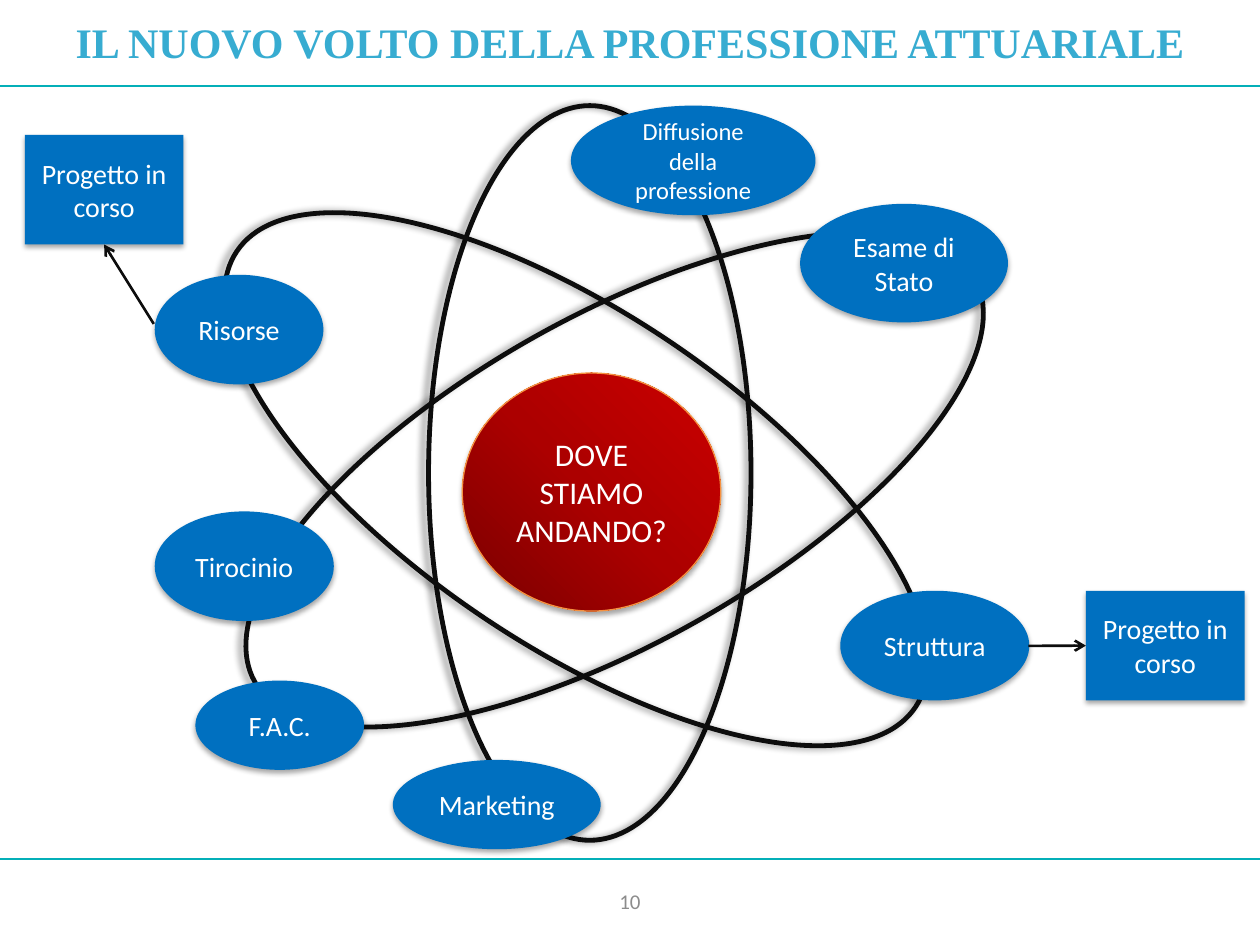
from copy import deepcopy

from lxml.etree import SubElement
from pptx import Presentation
from pptx.dml.color import RGBColor
from pptx.enum.shapes import MSO_CONNECTOR as CONN, MSO_SHAPE as SHAPE
from pptx.enum.text import MSO_ANCHOR as ANCHOR, MSO_AUTO_SIZE as AUTO, PP_ALIGN as ALIGN
from pptx.oxml.ns import qn
from pptx.util import Cm, Pt

BLUE, TEAL, INK, WHITE = "0070C0", "04AFB8", "0D0D0D", "FFFFFF"
WIDTH, HEIGHT = 25.4, 19.05
NODE_SHADOW = {"alpha": 35, "blur": 3.1, "dist": 1.8, "angle": 90}
ORBIT_SHADOW = {"alpha": 40, "blur": 4, "dist": 3, "angle": 180}

ORBITS = [  # left, top, width, height, rotation
    (8.64, 2.13, 6.5, 14.81, 0),
    (8.26, 1.42, 6.71, 16.48, 303.9),
    (9.09, 1.35, 6.6, 16.64, 60.7),
]
TOPICS = [  # text, box, size
    ("Diffusione della professione", (11.51, 2.13, 4.93, 2.21), 14),
    ("Marketing", (7.92, 15.32, 4.19, 1.8), 16),
    ("Risorse", (3.12, 5.54, 3.4, 2.21), 16),
    ("Struttura", (16.94, 11.91, 3.81, 2.21), 16),
    ("Esame di Stato", (16.13, 4.11, 4.19, 2.39), 16),
    ("F.A.C.", (3.94, 13.72, 3.4, 1.8), 16),
    ("Tirocinio", (3.12, 10.31, 3.61, 2.21), 16),
]
PROJECTS = [  # left, top, arrow start, side of the box it reaches
    (21.89, 11.91, (20.73, 13.02), 1),
    (0.5, 2.72, (3.1, 6.53), 2),
]


def rgb(value):
    return RGBColor.from_string(value)


class Deck:
    """Holds the style and the current slide."""

    text_format = {"name": "Calibri", "size": Pt(16), "bold": False}

    def __init__(self):
        self.prs = Presentation()
        self.prs.slide_width, self.prs.slide_height = Cm(WIDTH), Cm(HEIGHT)
        self.s = self.prs.slides.add_slide(self.prs.slide_layouts[5])

    def label(self, sp, text, color=WHITE, **changes):
        tf = sp.text_frame
        tf.word_wrap, tf.auto_size = True, AUTO.NONE
        tf.vertical_anchor = ANCHOR.MIDDLE
        p = tf.paragraphs[0]
        p.alignment = ALIGN.CENTER
        r = p.add_run()
        r.text = text
        for name, value in {**self.text_format, **changes}.items():
            setattr(r.font, name, value)
        r.font.color.rgb = rgb(color)

    def title(self, text, box, color, **changes):
        sp = self.s.shapes.title
        for name, value in zip(("left", "top", "width", "height"), box):
            setattr(sp, name, Cm(value))
        self.label(sp, text, color, **changes)

    def text(self, text, box, color, **changes):
        self.label(self.s.shapes.add_textbox(*map(Cm, box)), text, color, **changes)

    def shape(self, kind, box, shadow, fill=None, line=None, weight=1):
        sp = self.s.shapes.add_shape(kind, *map(Cm, box))
        if fill:
            sp.fill.solid()
            sp.fill.fore_color.rgb = rgb(fill)
        else:
            sp.fill.background()
        if line:
            sp.line.color.rgb = rgb(line)
            sp.line.width = Pt(weight)
        else:
            sp.line.fill.background()
        self.shadow(sp, **shadow)
        return sp

    def shadow(self, sp, alpha, blur, dist, angle):
        sp.shadow.inherit = False
        effects = sp._element.spPr.find(qn("a:effectLst"))
        outer = SubElement(effects, qn("a:outerShdw"), blurRad=str(Pt(blur)),
                           dist=str(Pt(dist)), dir=str(angle * 60000), rotWithShape="0")
        black = SubElement(outer, qn("a:srgbClr"), val="000000")
        SubElement(black, qn("a:alpha"), val=str(alpha * 1000))

    def gradient(self, sp, stops, angle):
        """Fill with (percent, colour) stops; angle runs counter-clockwise."""
        sp.fill.gradient()
        sp.fill.gradient_angle = angle
        gs_list = sp._element.spPr.find(qn("a:gradFill")).find(qn("a:gsLst"))
        while len(gs_list) < len(stops):
            gs_list.append(deepcopy(gs_list[0]))
        for stop, (percent, color) in zip(sp.fill.gradient_stops, stops):
            stop.position = percent / 100
            stop.color.rgb = rgb(color)

    def line(self, start, end, color, weight):
        cn = self.s.shapes.add_connector(CONN.STRAIGHT, *map(Cm, (*start, *end)))
        cn.line.color.rgb = rgb(color)
        cn.line.width = Pt(weight)
        SubElement(cn._element.spPr, qn("a:effectLst"))
        return cn

    def arrow(self, start, target, side):
        cn = self.line(start, start, INK, 1.5)
        cn.end_connect(target, side)
        SubElement(cn._element.spPr.find(qn("a:ln")), qn("a:tailEnd"), type="arrow")


def main():
    deck = Deck()
    deck.title("IL NUOVO VOLTO DELLA PROFESSIONE ATTUARIALE", (0, 0.15, WIDTH, 1.37),
               "37ACD1", name="Times New Roman", size=Pt(24), bold=True)
    for y, weight in ((17.32, 1), (1.73, 1.5)):
        deck.line((0, y), (WIDTH, y), TEAL, weight)

    for *box, rotation in ORBITS:
        orbit = deck.shape(SHAPE.OVAL, box, ORBIT_SHADOW, line=INK, weight=2.75)
        orbit.rotation = rotation

    core = deck.shape(SHAPE.OVAL, (9.32, 7.52, 5.21, 4.8), NODE_SHADOW,
                      line="F69240", weight=0.75)
    deck.gradient(core, [(0, "790000"), (50, "AC0000"), (100, "CC0000")], 45)
    deck.label(core, "DOVE STIAMO ANDANDO?", size=Pt(18))

    for text, box, size in TOPICS:
        topic = deck.shape(SHAPE.OVAL, box, NODE_SHADOW, BLUE)
        deck.label(topic, text, size=Pt(size))

    for left, top, start, side in PROJECTS:
        project = deck.shape(SHAPE.RECTANGLE, (left, top, 3.2, 2.21), NODE_SHADOW, BLUE)
        deck.label(project, "Progetto in corso")
        deck.arrow(start, project, side)

    deck.text("10", (0, 17.65, WIDTH, 1.02), "8C8C8C", size=Pt(12))
    deck.prs.save("out.pptx")


if __name__ == "__main__":
    main()
